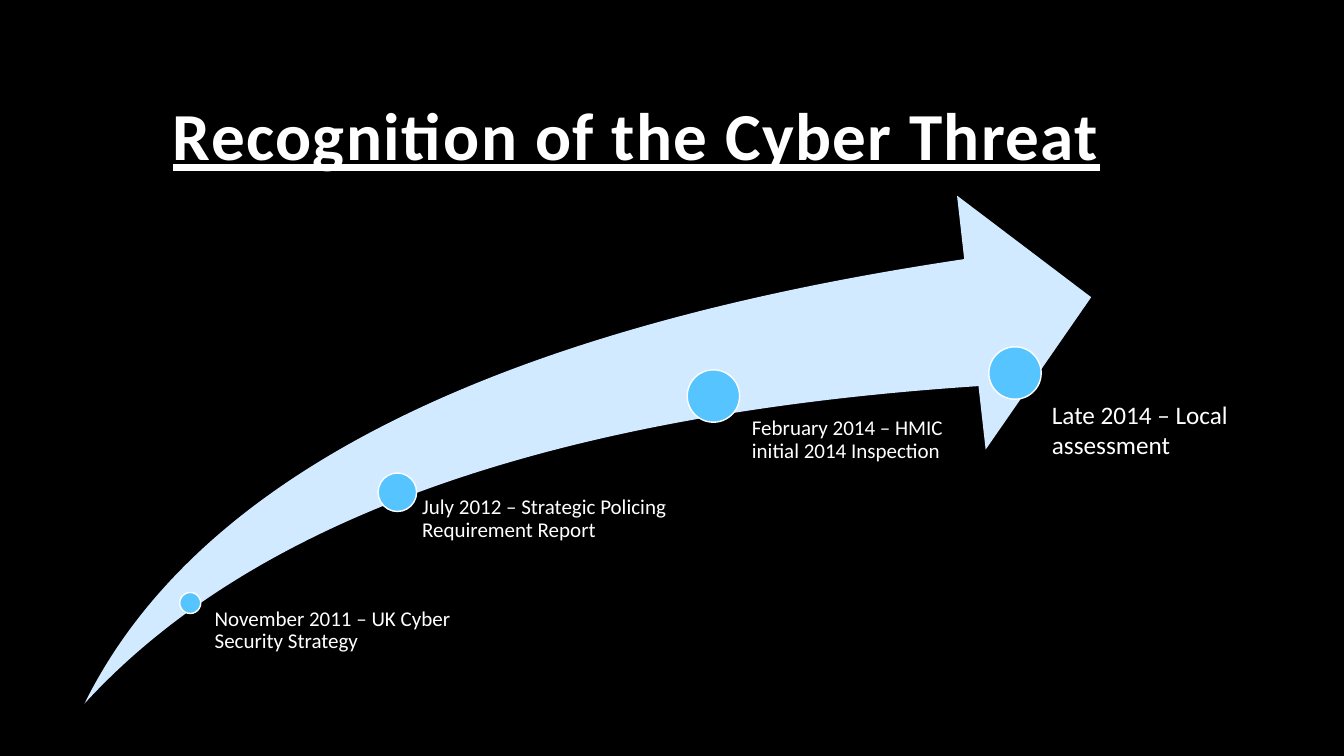
from pptx import Presentation
from pptx.dml.color import RGBColor
from pptx.enum.shapes import MSO_SHAPE
from pptx.enum.text import MSO_ANCHOR, MSO_AUTO_SIZE, PP_ALIGN
from pptx.util import Cm, Pt

SWOOSH, ELLIPSE = MSO_SHAPE.SWOOSH_ARROW, MSO_SHAPE.OVAL
TOP, BOTTOM = MSO_ANCHOR.TOP, MSO_ANCHOR.BOTTOM
LEFT = PP_ALIGN.LEFT
NO_FIT, GROW = MSO_AUTO_SIZE.NONE, MSO_AUTO_SIZE.SHAPE_TO_FIT_TEXT

BLACK = RGBColor(0x00, 0x00, 0x00)
WHITE = RGBColor(0xFF, 0xFF, 0xFF)
PALE_BLUE = RGBColor(0xD1, 0xEA, 0xFF)
SKY_BLUE = RGBColor(0x56, 0xC5, 0xFF)

DEFAULT_INSETS = (0.25, 0.13, 0.25, 0.13)

# Marker (left, top, diameter), label, label box, label format; lengths in cm
MILESTONES = [
    ((4.53, 14.93, 0.53), "November 2011 – UK Cyber Security Strategy",
     (5.13, 15.32, 6.88, 2.36), {"insets": (0.28, 0, 0, 0)}),
    ((9.53, 11.92, 0.97), "July 2012 – Strategic Policing Requirement Report",
     (10.13, 12.52, 7.09, 1.83), {"insets": (0.51, 0, 0, 0)}),
    ((17.32, 9.32, 1.32), "February 2014 – HMIC initial 2014 Inspection",
     (18.24, 10.52, 6.68, 2.49), {"insets": (0.71, 0, 0, 0)}),
    ((24.92, 8.74, 1.32), "Late 2014 – Local assessment",
     (26.26, 9.93, 5.26, 1.8), {"size": 18, "line_spacing": 1.0, "fit": GROW}),
]


def add_text(slide, box, text, *, size=15, bold=False, underline=False,
             tracking=None, anchor=TOP, line_spacing=0.9,
             insets=DEFAULT_INSETS, fit=NO_FIT):
    frame = slide.shapes.add_textbox(*map(Cm, box)).text_frame
    frame.word_wrap = True
    frame.auto_size = fit
    frame.vertical_anchor = anchor
    (frame.margin_left, frame.margin_top,
     frame.margin_right, frame.margin_bottom) = map(Cm, insets)
    paragraph = frame.paragraphs[0]
    paragraph.alignment = LEFT
    paragraph.line_spacing = line_spacing
    run = paragraph.add_run()
    run.text = text
    font = run.font
    font.name, font.size = "Calibri", Pt(size)
    font.bold, font.underline = bold, underline
    font.color.rgb = WHITE
    if tracking:
        # Letter spacing in hundredths of a point
        run._r.get_or_add_rPr().set("spc", str(tracking))


def add_filled_shape(slide, kind, box, fill, outline=None):
    shape = slide.shapes.add_shape(kind, *map(Cm, box))
    shape.shadow.inherit = False
    shape.fill.solid()
    shape.fill.fore_color.rgb = fill
    if outline is None:
        shape.line.fill.background()
    else:
        shape.line.color.rgb = outline
        shape.line.width = Pt(1)
    return shape


def add_milestone(slide, marker, label, label_box, label_format):
    left, top, diameter = marker
    add_filled_shape(slide, ELLIPSE, (left, top, diameter, diameter),
                     SKY_BLUE, outline=WHITE)
    add_text(slide, label_box, label, **label_format)


def main():
    deck = Presentation()
    deck.slide_width, deck.slide_height = Cm(33.87), Cm(19.05)
    slide = deck.slides.add_slide(deck.slide_layouts[6])
    slide.background.fill.solid()
    slide.background.fill.fore_color.rgb = BLACK

    # Title
    add_text(slide, (4.11, 0.74, 25.4, 3.81), "Recognition of the Cyber Threat",
             size=48, bold=True, underline=True, tracking=100, anchor=BOTTOM)

    # Rising arrow
    arrow = add_filled_shape(slide, SWOOSH, (2.13, 4.93, 25.37, 12.8), PALE_BLUE)
    arrow.adjustments[0] = 0.25
    arrow.adjustments[1] = 0.25

    # Milestones along the arrow
    for milestone in MILESTONES:
        add_milestone(slide, *milestone)

    deck.save("out.pptx")


if __name__ == "__main__":
    main()
